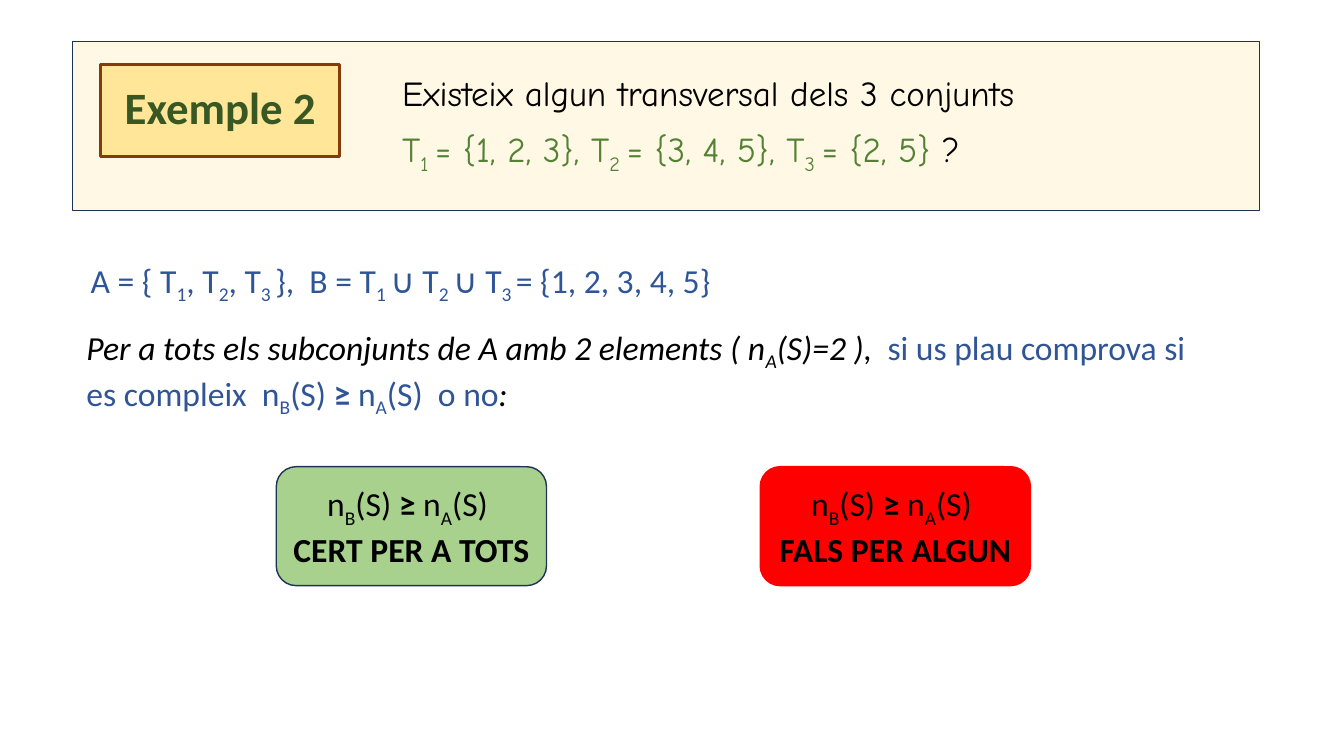
from dataclasses import dataclass

from lxml import etree
from pptx import Presentation
from pptx import util as u
from pptx.dml.color import RGBColor
from pptx.enum import shapes, text
from pptx.oxml.ns import qn

PX = 9144  # EMU per px, 100 px to the inch


@dataclass(frozen=True)
class Theme:
    body_font: str = "Calibri"
    question_font: str = "Comic Neue"
    body_size: int = 24
    question_size: int = 25
    title_size: int = 32
    black: str = "000000"
    blue: str = "2F5597"
    green: str = "548235"
    dark_green: str = "385723"
    navy: str = "1E3256"
    brown: str = "843C0B"
    cream: str = "FFF2CC"
    yellow: str = "FFE699"
    light_green: str = "A9D18E"
    red: str = "FF0000"


class SlideBuilder:
    def __init__(self, slide, theme):
        self.slide = slide
        self.theme = theme

    def fill_text(self, frame, lines, font=None, size=None, align=None, spacing=None, before=None):
        """Each line is a list of (words, colour, styles); |x| marks a subscript,
        and the styles are "b" for bold and "i" for italic."""
        frame.word_wrap = True
        for index, line in enumerate(lines):
            paragraph = frame.add_paragraph() if index else frame.paragraphs[0]
            paragraph.alignment = align
            paragraph.line_spacing = spacing
            paragraph.space_before = before
            for words, colour, styles in line:
                for part, piece in enumerate(words.split("|")):
                    if not piece:
                        continue
                    run = paragraph.add_run()
                    run.text = piece
                    run.font.name = font or self.theme.body_font
                    run.font.size = u.Pt(size or self.theme.body_size)
                    run.font.color.rgb = RGBColor.from_string(colour)
                    run.font.bold = "b" in styles
                    run.font.italic = "i" in styles
                    if part % 2:
                        run._r.get_or_add_rPr().set("baseline", "-25000")

    def label(self, box, lines, **style):
        label = self.slide.shapes.add_textbox(*(n * PX for n in box))
        self.fill_text(label.text_frame, lines, **style)

    def panel(self, kind, box, fill, line, width=1, opacity=100, lines=(), **style):
        panel = self.slide.shapes.add_shape(kind, *(n * PX for n in box))
        panel.shadow.inherit = False
        panel.fill.solid()
        panel.fill.fore_color.rgb = RGBColor.from_string(fill)
        if opacity < 100:
            colour = panel._element.spPr.find(qn("a:solidFill"))[0]
            etree.SubElement(colour, qn("a:alpha")).set("val", str(opacity * 1000))
        panel.line.color.rgb = RGBColor.from_string(line)
        panel.line.width = u.Pt(width)
        panel.text_frame.vertical_anchor = text.MSO_ANCHOR.MIDDLE
        self.fill_text(panel.text_frame, lines, align=text.PP_ALIGN.CENTER, **style)


def condition(colour, ending=""):
    return [("n|B|(S) ", colour, ""), ("≥ ", colour, "b"), ("n|A|(S) " + ending, colour, "")]


def main():
    theme = Theme()
    deck = Presentation()
    deck.slide_width, deck.slide_height = 1333 * PX, 750 * PX
    builder = SlideBuilder(deck.slides.add_slide(deck.slide_layouts[6]), theme)
    rectangle = shapes.MSO_SHAPE.RECTANGLE

    # Sets A and B
    builder.label((80, 253, 1175, 50), [
        [("A = { T|1|, T|2|, T|3 |},  B = T|1 |∪ T|2 |∪ T|3 |= {1, 2, 3, 4, 5}", theme.blue, "")],
    ])

    # Task
    builder.label((76, 319, 1210, 91), [
        [("Per a tots els subconjunts de A amb 2 elements ( n|A|(S)=2 ),  ", theme.black, "i"),
         ("si us plau comprova si", theme.blue, "")],
        [("es compleix  ", theme.blue, "")] + condition(theme.blue, " o no")
        + [(":", theme.black, "i")],
    ])

    # Possible answers
    answers = [
        (274, "CERT PER A TOTS", theme.light_green, theme.navy),
        (754, "FALS PER ALGUN", theme.red, theme.red),
    ]
    for left, verdict, fill, outline in answers:
        builder.panel(shapes.MSO_SHAPE.ROUNDED_RECTANGLE, (left, 463, 268, 118), fill, outline,
                      lines=[condition(theme.black), [(verdict, theme.black, "b")]])

    # Question banner
    builder.panel(rectangle, (72, 41, 1177, 168), theme.cream, theme.navy, opacity=50)
    builder.label((389, 71, 860, 124), [
        [("Existeix algun transversal dels 3 conjunts", theme.black, "")],
        [("T|1 |= {1, 2, 3}, T|2 |= {3, 4, 5}, T|3 |= {2, 5} ", theme.green, ""),
         ("?", theme.black, "")],
    ], font=theme.question_font, size=theme.question_size, spacing=0.9, before=u.Pt(10))

    # Example number
    builder.panel(rectangle, (100, 64, 237, 91), theme.yellow, theme.brown, width=2,
                  lines=[[("Exemple 2", theme.dark_green, "b")]],
                  size=theme.title_size, spacing=0.9)

    deck.save("out.pptx")


if __name__ == "__main__":
    main()
